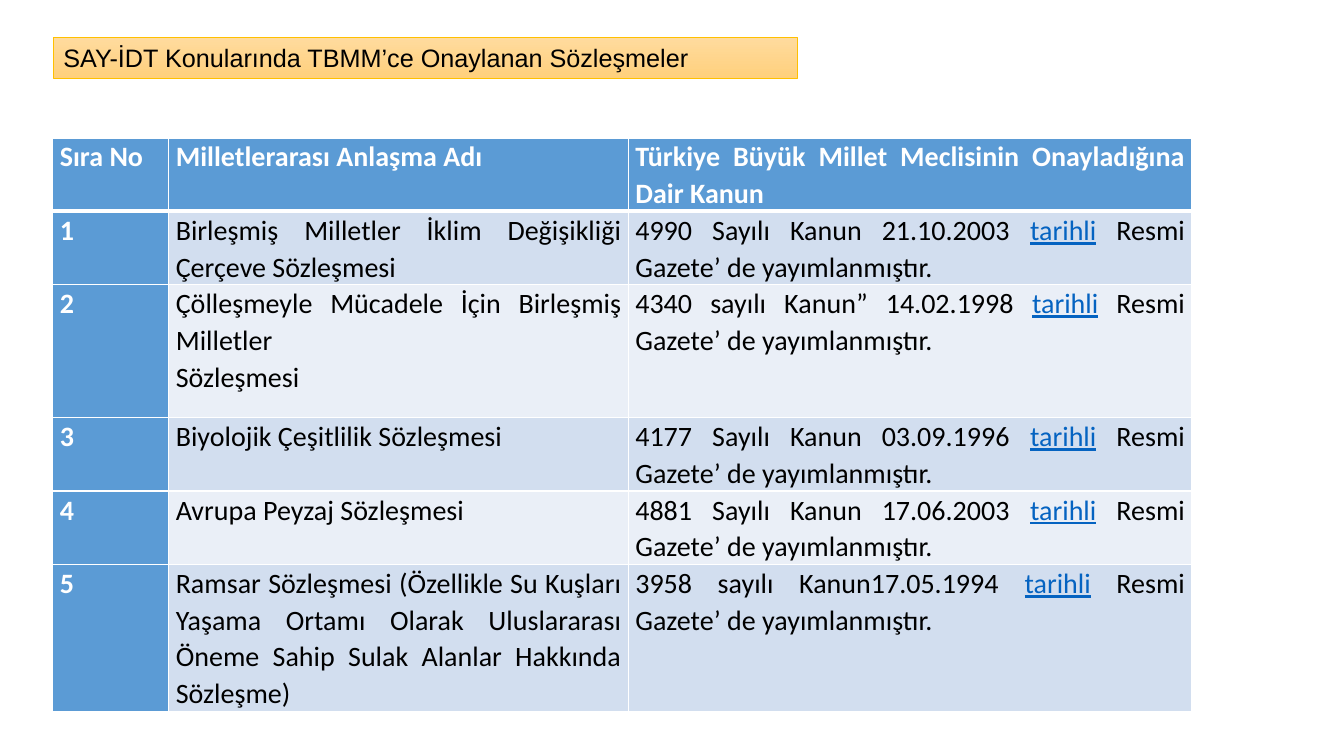
from lxml.etree import SubElement
from pptx import Presentation
from pptx.dml.color import RGBColor
from pptx.enum.shapes import MSO_SHAPE
from pptx.enum.text import MSO_ANCHOR, PP_ALIGN
from pptx.oxml.ns import qn
from pptx.util import Pt

COLORS = {
    "white": "FFFFFF", "black": "000000", "blue": "5B9BD5", "link": "0563C1",
    "band_dark": "D2DEEF", "band_light": "EAEFF7",
    "title_top": "FFDB9E", "title_bottom": "FFD07C", "title_line": "FFC000",
}
COL_WIDTHS = [82.8, 328.3, 402.5]
ROW_HEIGHTS = [47.5, 47.5, 95, 47.5, 47.5, 95]
HEADERS = ["Sıra No", "Milletlerarası Anlaşma Adı",
           "Türkiye Büyük Millet Meclisinin Onayladığına Dair Kanun"]
# Agreement name (one paragraph per line) and the law that approved it
AGREEMENTS = [
    ("Birleşmiş Milletler İklim Değişikliği Çerçeve Sözleşmesi",
     "4990 Sayılı Kanun 21.10.2003 "),
    ("Çölleşmeyle Mücadele İçin Birleşmiş Milletler\nSözleşmesi",
     "4340 sayılı Kanun” 14.02.1998 "),
    ("Biyolojik Çeşitlilik Sözleşmesi", "4177 Sayılı Kanun 03.09.1996 "),
    ("Avrupa Peyzaj Sözleşmesi", "4881 Sayılı Kanun 17.06.2003 "),
    ("Ramsar Sözleşmesi (Özellikle Su Kuşları Yaşama Ortamı Olarak Uluslararası "
     "Öneme Sahip Sulak Alanlar Hakkında Sözleşme)", "3958 sayılı Kanun17.05.1994 "),
]


def rgb(name):
    return RGBColor.from_string(COLORS[name])


def set_attrs(obj, values):
    for name, value in values.items():
        setattr(obj, name, value)


def add_run(p, text, color, **font):
    r = p.add_run()
    r.text = text
    set_attrs(r.font, font)
    r.font.color.rgb = rgb(color)


def set_borders(cell, top, bottom):
    tc_pr = cell._tc.get_or_add_tcPr()
    for side, width in {"L": 1, "R": 1, "T": top, "B": bottom}.items():
        ln = SubElement(tc_pr, qn(f"a:ln{side}"), w=str(Pt(width)))
        fill = SubElement(ln, qn("a:solidFill"))
        SubElement(fill, qn("a:srgbClr"), val=COLORS["white"])


def fill_cell(cell, paragraphs, fill, top=1, bottom=1):
    """Each paragraph is a list of (text, color, extra font values)."""
    set_borders(cell, top, bottom)
    cell.fill.solid()
    cell.fill.fore_color.rgb = rgb(fill)
    set_attrs(cell, {"margin_left": Pt(5), "margin_right": Pt(5),
                     "margin_top": 0, "margin_bottom": 0})
    tf = cell.text_frame
    for i, runs in enumerate(paragraphs):
        p = tf.add_paragraph() if i else tf.paragraphs[0]
        set_attrs(p, {"alignment": PP_ALIGN.JUSTIFY, "line_spacing": 1.07})
        for text, color, extra in runs:
            font = {"name": "Calibri", "size": Pt(20), "bold": False, **extra}
            add_run(p, text, color, **font)


def add_title(s, text):
    sp = s.shapes.add_shape(MSO_SHAPE.RECTANGLE, Pt(38.2), Pt(26.8), Pt(531.5), Pt(29))
    sp.shadow.inherit = False
    sp.fill.gradient()
    sp.fill.gradient_angle = 270
    stops = ("title_top", 0), ("title_bottom", 1)
    for stop, (color, position) in zip(sp.fill.gradient_stops, stops):
        stop.color.rgb = rgb(color)
        stop.position = position
    sp.line.color.rgb = rgb("title_line")
    sp.line.width = Pt(0.5)
    tf = sp.text_frame
    set_attrs(tf, {"word_wrap": True, "vertical_anchor": MSO_ANCHOR.MIDDLE})
    p = tf.paragraphs[0]
    p.alignment = PP_ALIGN.LEFT
    add_run(p, text, "black", name="Arial", size=Pt(18))


def add_agreements(s):
    table = s.shapes.add_table(len(ROW_HEIGHTS), len(COL_WIDTHS), Pt(37.8), Pt(98.5),
                               Pt(sum(COL_WIDTHS)), Pt(sum(ROW_HEIGHTS))).table
    for col, width in zip(table.columns, COL_WIDTHS):
        col.width = Pt(width)
    for row, height in zip(table.rows, ROW_HEIGHTS):
        row.height = Pt(height)

    # Header row
    bold = {"bold": True}
    for col, text in enumerate(HEADERS):
        fill_cell(table.cell(0, col), [[(text, "white", bold)]], "blue", bottom=3)

    # Numbered agreements in alternating bands
    for n, (name, law) in enumerate(AGREEMENTS, 1):
        band = "band_dark" if n % 2 else "band_light"
        names = [[(line, "black", {})] for line in name.split("\n")]
        approval = [[(law, "black", {}),
                     ("tarihli", "link", {"underline": True}),
                     (" Resmi Gazete’ de yayımlanmıştır.", "black", {})]]
        cells = ([[(str(n), "white", bold)]], "blue"), (names, band), (approval, band)
        for col, (paragraphs, fill) in enumerate(cells):
            fill_cell(table.cell(n, col), paragraphs, fill, top=3 if n == 1 else 1)


def main():
    prs = Presentation()
    set_attrs(prs, {"slide_width": Pt(960), "slide_height": Pt(540)})
    s = prs.slides.add_slide(prs.slide_layouts[6])
    add_agreements(s)
    add_title(s, "SAY-İDT Konularında TBMM’ce Onaylanan Sözleşmeler")
    prs.save("out.pptx")


if __name__ == "__main__":
    main()
